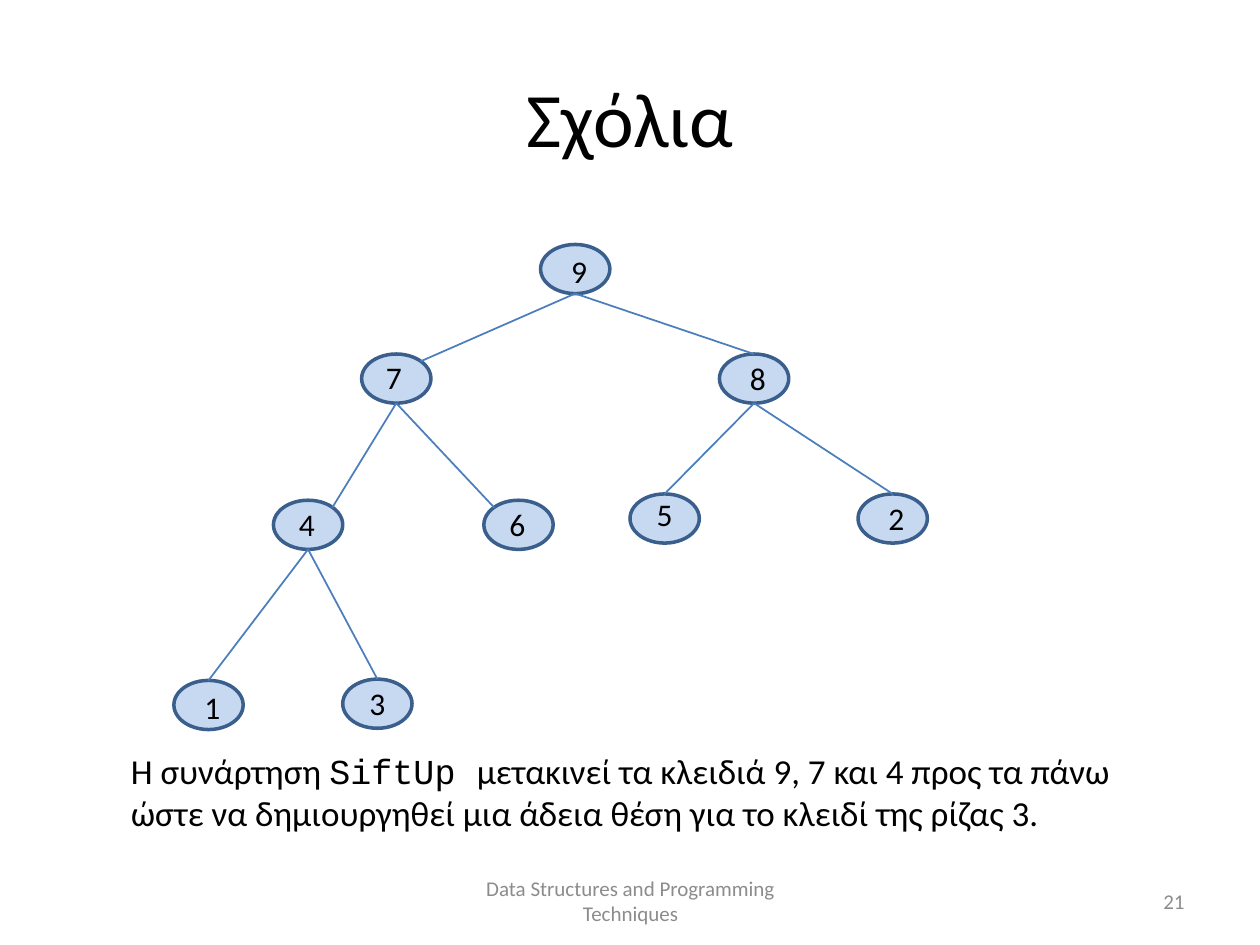
from dataclasses import dataclass

from pptx import Presentation
from pptx.dml.color import RGBColor
from pptx.enum.shapes import MSO_CONNECTOR, MSO_SHAPE
from pptx.enum.text import MSO_ANCHOR, PP_ALIGN
from pptx.oxml.ns import qn
from pptx.util import Inches, Pt

OVAL, LINE = MSO_SHAPE.OVAL, MSO_CONNECTOR.STRAIGHT
LEFT, MID, RIGHT = PP_ALIGN.LEFT, PP_ALIGN.CENTER, PP_ALIGN.RIGHT
TOP, CENTER = MSO_ANCHOR.TOP, MSO_ANCHOR.MIDDLE


@dataclass(frozen=True)
class Theme:
    ink: str = "000000"
    gray: str = "8C8C8C"
    fill: str = "C6D9F1"
    rim: str = "3A5F8C"
    edge: str = "4B7EBC"
    font: str = "Calibri"
    code: str = "Courier New"
    head: int = 44
    body: int = 20
    key: int = 18
    foot: int = 12


THEME = Theme()
NODE = (0.55, 0.39)
LABEL = (0.61, 0.4)

# key: node left and top in the tree box, label shift from the node
NODES = {
    "9": (2.91, 0, 0, 0.01),
    "7": (1.49, 0.87, -0.05, -0.02),
    "8": (4.33, 0.87, 0, -0.01),
    "4": (0.79, 2.03, -0.04, -0.01),
    "6": (2.46, 2.03, -0.04, -0.01),
    "5": (3.62, 1.98, -0.03, -0.04),
    "2": (5.43, 1.98, 0, -0.01),
    "3": (1.34, 3.45, -0.03, -0.01),
    "1": (0, 3.46, 0, 0.01),
}

# Where an edge meets the child, as shares of the node size
PEAK, WEST, EAST = (0.5, 0), (0.15, 0.15), (0.85, 0.15)
EDGES = [
    ("7", "4", EAST), ("7", "6", WEST), ("4", "3", PEAK), ("4", "1", PEAK),
    ("9", "7", EAST), ("9", "8", PEAK), ("8", "5", PEAK), ("8", "2", PEAK),
]


def apply(item, form):
    for name, value in form.items():
        setattr(item, name, value)


def write(frame, runs, size, color=THEME.ink, align=LEFT, anchor=TOP):
    """Fill a text frame with one paragraph of (text, font) runs."""
    apply(frame, {"word_wrap": True, "vertical_anchor": anchor})
    para = frame.paragraphs[0]
    para.alignment = align
    for text, font in runs:
        run = para.add_run()
        run.text = text
        apply(run.font, {"name": font, "size": Pt(size)})
        run.font.color.rgb = RGBColor.from_string(color)


def add_text(slide, box, runs, size, **form):
    shape = slide.shapes.add_textbox(*map(Inches, box))
    write(shape.text_frame, runs, size, **form)


def stroke(shape, color, width):
    shape.line.color.rgb = RGBColor.from_string(color)
    shape.line.width = Pt(width)


def add_title(slide, box, text):
    title = slide.shapes.title
    apply(title, dict(zip(("left", "top", "width", "height"), map(Inches, box))))
    write(title.text_frame, [(text, THEME.font)], THEME.head,
          align=MID, anchor=CENTER)


def add_tree(slide, left, top):
    def spot(key, share):
        x, y = NODES[key][:2]
        return (Inches(left + x + share[0] * NODE[0]),
                Inches(top + y + share[1] * NODE[1]))

    # Nodes
    for key in NODES:
        node = slide.shapes.add_shape(OVAL, *spot(key, (0, 0)), *map(Inches, NODE))
        node.shadow.inherit = False
        node.fill.solid()
        node.fill.fore_color.rgb = RGBColor.from_string(THEME.fill)
        stroke(node, THEME.rim, 2)

    # Edges, from the foot of the parent to the child
    for parent, child, share in EDGES:
        edge = slide.shapes.add_connector(
            LINE, *spot(parent, (0.5, 1)), *spot(child, share))
        stroke(edge, THEME.edge, 1)
        props = edge._element.spPr
        props.append(props.makeelement(qn("a:effectLst"), {}))

    # Keys
    for key, (x, y, dx, dy) in NODES.items():
        add_text(slide, (left + x + dx, top + y + dy, *LABEL),
                 [(key, THEME.font)], THEME.key, align=MID)


def add_note(slide, box):
    runs = [
        ("Η συνάρτηση ", THEME.font),
        ("SiftUp ", THEME.code),
        ("μετακινεί τα κλειδιά 9, 7 και 4 προς τα πάνω ώστε να δημιουργηθεί "
         "μια άδεια θέση για το κλειδί της ρίζας 3.", THEME.font),
    ]
    add_text(slide, box, runs, THEME.body)


def add_footer(slide, left, top, high):
    parts = [
        (0, 3.17, "Data Structures and Programming Techniques", MID),
        (3.75, 2.33, "21", RIGHT),
    ]
    for x, wide, text, align in parts:
        add_text(slide, (left + x, top, wide, high), [(text, THEME.font)],
                 THEME.foot, color=THEME.gray, align=align, anchor=CENTER)


def main():
    deck = Presentation()
    apply(deck, {"slide_width": Inches(10), "slide_height": Inches(7.5)})
    slide = deck.slides.add_slide(deck.slide_layouts[5])
    add_title(slide, (0.5, 0.3, 9, 1.25), "Σχόλια")
    add_tree(slide, 1.38, 1.94)
    add_note(slide, (0.94, 5.9, 8.35, 0.77))
    add_footer(slide, 3.42, 6.95, 0.4)
    deck.save("out.pptx")


if __name__ == "__main__":
    main()
